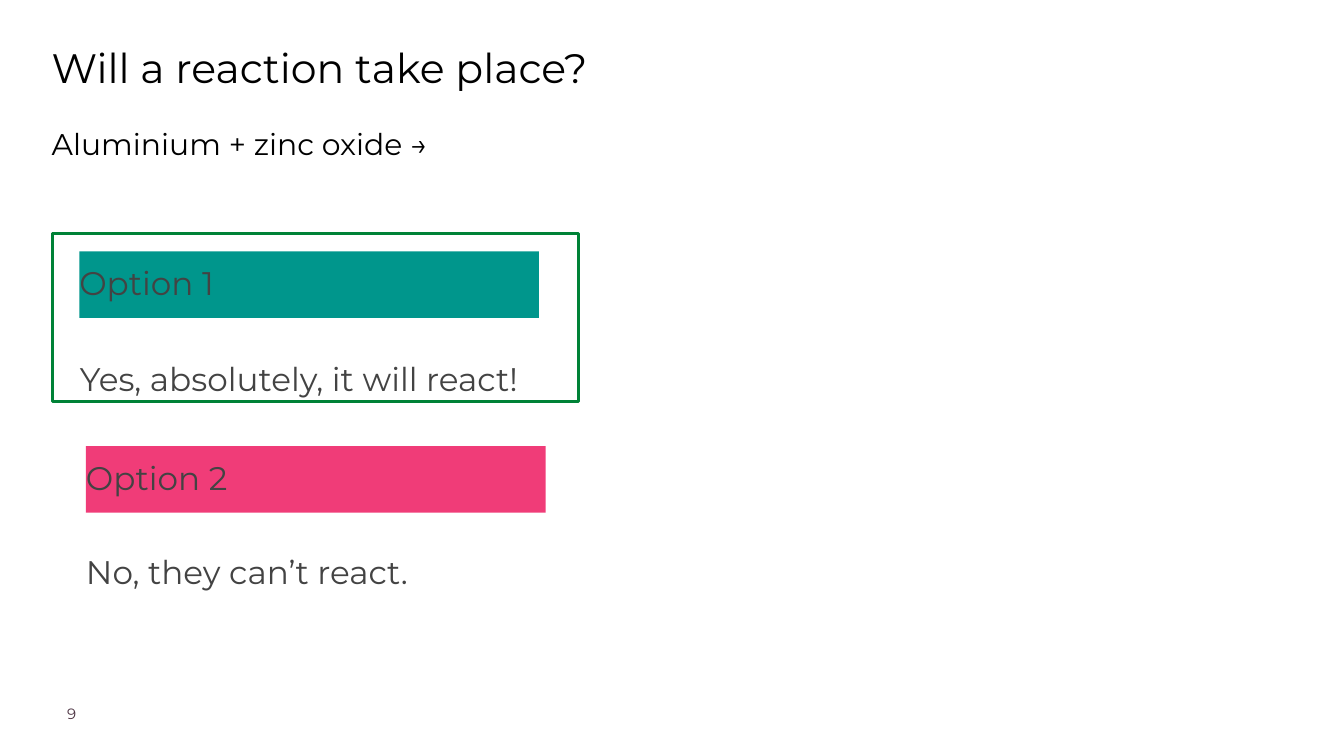
from typing import NamedTuple

from pptx import Presentation
from pptx.dml.color import RGBColor
from pptx.enum.shapes import MSO_SHAPE
from pptx.enum.text import MSO_ANCHOR, PP_ALIGN
from pptx.util import Inches, Pt

RECTANGLE = MSO_SHAPE.RECTANGLE
TOP = MSO_ANCHOR.TOP
LEFT = PP_ALIGN.LEFT
FONT = "Montserrat"
BLACK, GREY, PLUM = "000000", "434343", "4B3241"
TEAL, PINK, GREEN = "00968C", "F03C78", "008237"


class Box(NamedTuple):
    left: float
    top: float
    width: float
    height: float

    def lengths(self) -> list:
        return [Inches(value) for value in self]


class Option(NamedTuple):
    label: str
    bar: Box
    color: str
    answer: str
    answer_box: Box


OPTIONS = [
    Option("Option 1", Box(1.18, 3.74, 6.84, 0.99), TEAL,
           "Yes, absolutely, it will react!", Box(1.19, 5.16, 7.65, 1.38)),
    Option("Option 2", Box(1.28, 6.64, 6.84, 0.99), PINK,
           "No, they can’t react.", Box(1.28, 8.03, 8.64, 1.38)),
]


def rgb(value: str) -> RGBColor:
    return RGBColor.from_string(value)


def write(shape, text: str, size: float, color: str, inset: float = 0):
    """Put one line of text at the top left of a shape; return its paragraph."""
    frame = shape.text_frame
    frame.word_wrap = True
    frame.vertical_anchor = TOP
    frame.margin_left = frame.margin_right = Inches(inset)
    frame.margin_top = frame.margin_bottom = Inches(inset)
    paragraph = frame.paragraphs[0]
    paragraph.alignment = LEFT
    run = paragraph.add_run()
    run.text = text
    run.font.name = FONT
    run.font.size = Pt(size)
    run.font.color.rgb = rgb(color)
    return paragraph


def add_text(slide, box: Box, text: str, size: float, color: str, inset: float = 0) -> None:
    write(slide.shapes.add_textbox(*box.lengths()), text, size, color, inset)


def add_rectangle(slide, box: Box):
    rectangle = slide.shapes.add_shape(RECTANGLE, *box.lengths())
    rectangle.shadow.inherit = False
    return rectangle


def add_option(slide, option: Option) -> None:
    bar = add_rectangle(slide, option.bar)
    bar.fill.solid()
    bar.fill.fore_color.rgb = rgb(option.color)
    bar.line.fill.background()
    answer = slide.shapes.add_textbox(*option.answer_box.lengths())
    for shape, text in ((bar, option.label), (answer, option.answer)):
        paragraph = write(shape, text, 35, GREY)
        paragraph.line_spacing = 1.3
        paragraph.space_after = Pt(20)


def add_answer_frame(slide, box: Box) -> None:
    frame = add_rectangle(slide, box)
    frame.fill.background()
    frame.line.color.rgb = rgb(GREEN)
    frame.line.width = Pt(3)


def main() -> None:
    presentation = Presentation()
    presentation.slide_width = Inches(20)
    presentation.slide_height = Inches(11.25)
    slide = presentation.slides.add_slide(presentation.slide_layouts[6])

    add_text(slide, Box(1, 10.48, 1.57, 0.39), "9", 16, PLUM)
    add_text(slide, Box(0.67, 0.53, 10.87, 1.27), "Will a reaction take place?", 44, BLACK, 0.1)
    add_text(slide, Box(0.67, 1.77, 10.87, 1.27), "Aluminium + zinc oxide →", 32, BLACK, 0.1)
    for option in OPTIONS:
        add_option(slide, option)
    add_answer_frame(slide, Box(0.78, 3.48, 7.83, 2.49))

    presentation.save("out.pptx")


if __name__ == "__main__":
    main()
